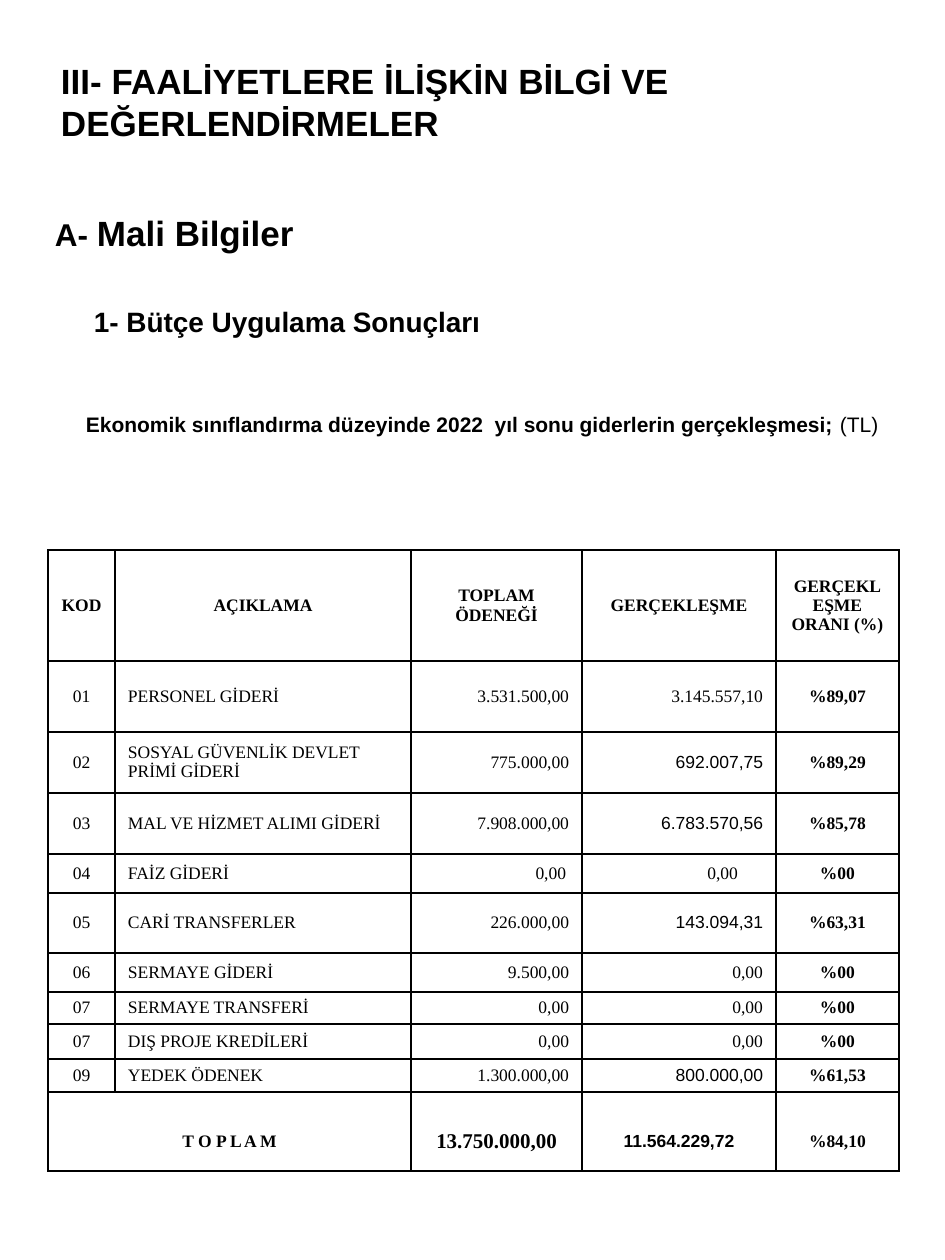
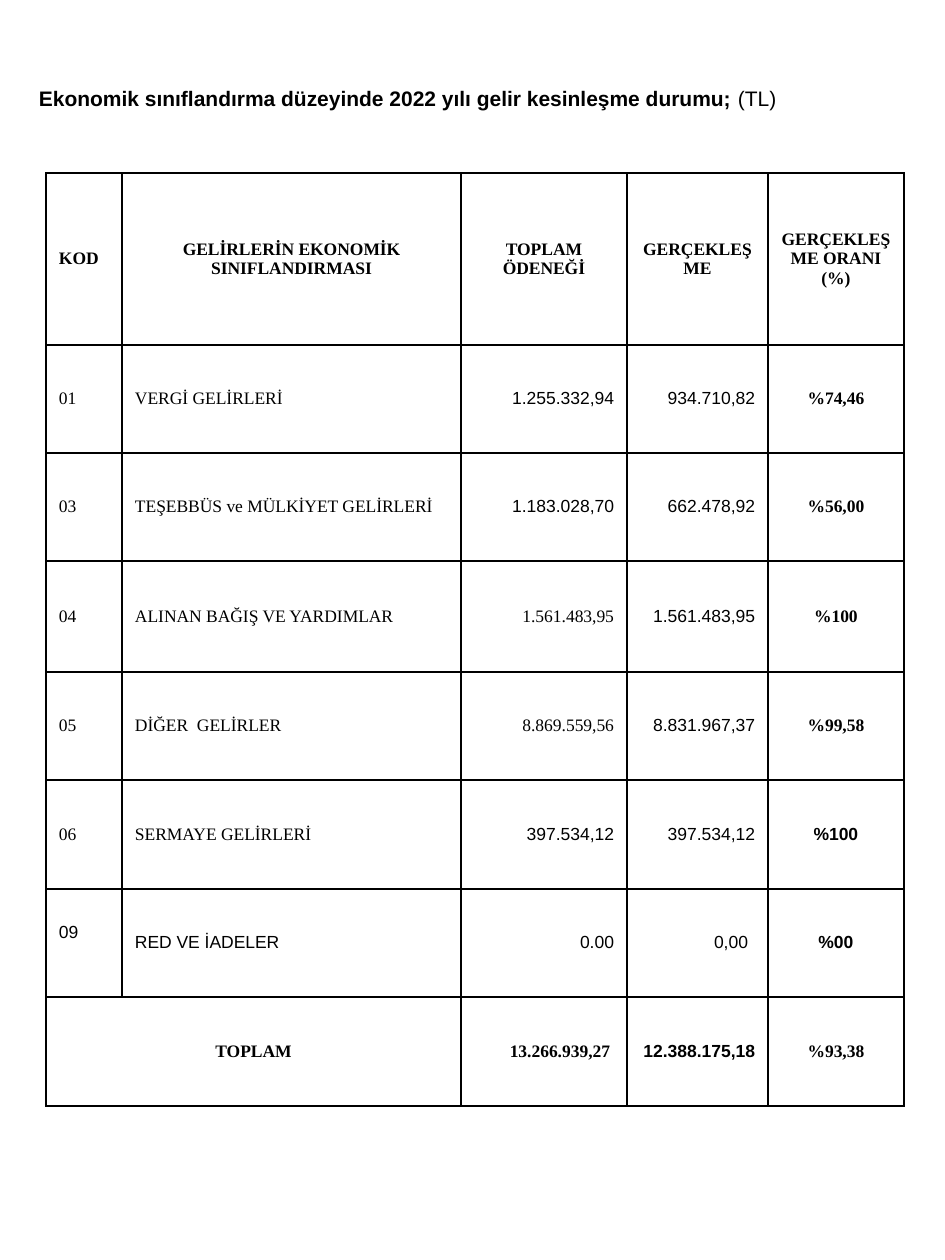
from dataclasses import dataclass
from pptx import Presentation
from pptx import util as u
from pptx.dml import color
from pptx.enum import text
from pptx.oxml import parse_xml
from pptx.oxml import ns

LEFT, MID, RIGHT = text.PP_ALIGN.LEFT, text.PP_ALIGN.CENTER, text.PP_ALIGN.RIGHT
CENTER = text.MSO_ANCHOR.MIDDLE


@dataclass(frozen=True)
class Theme:
    ink: str = "000000"
    sans: str = "Arial"
    serif: str = "Times New Roman"
    title: int = 20
    mark: int = 18
    head: int = 16
    lead: int = 12
    cell: int = 10
    rule: int = 12700
    side: int = 13
    edge: int = 5


T = Theme()


def px(n):
    return u.Emu(round(n * 914400 / 126))


def apply(item, **values):
    for name, value in values.items():
        setattr(item, name, value)


def write(para, words, size, bold=False, face=T.sans):
    run = para.add_run()
    run.text = words
    apply(run.font, size=u.Pt(size), bold=bold, name=face)
    run.font.color.rgb = color.RGBColor.from_string(T.ink)


def frame(slide, box, lines, top=6, anchor=text.MSO_ANCHOR.TOP):
    area = slide.shapes.add_textbox(*map(px, box)).text_frame
    apply(area, word_wrap=True, vertical_anchor=anchor, margin_top=px(top),
          margin_left=px(T.side), margin_right=px(T.side), margin_bottom=px(6))
    for i, (dent, gap, runs) in enumerate(lines):
        para = area.add_paragraph() if i else area.paragraphs[0]
        para.space_before = px(gap)
        para._p.get_or_add_pPr().set("marL", str(px(dent)))
        for run in runs:
            write(para, *run)


def border(cell):
    props = cell._tc.get_or_add_tcPr()
    for i, side in enumerate("LRTB"):
        props.insert(i, parse_xml(
            f'<a:ln{side} {ns.nsdecls("a")} w="{T.rule}"><a:solidFill>'
            f'<a:srgbClr val="{T.ink}"/></a:solidFill></a:ln{side}>'))


def grid(slide, spot, cols, rows, data, sides, sans, big=(), pads={}):
    box = (*spot, sum(cols), sum(rows))
    table = slide.shapes.add_table(len(rows), len(cols), *map(px, box)).table
    apply(table, first_row=False, horz_banding=False)
    for col, wide in zip(table.columns, cols):
        col.width = px(wide)
    for row, high in zip(table.rows, rows):
        row.height = px(high)
    last = len(rows) - 1
    table.cell(last, 0).merge(table.cell(last, 1))
    for r, line in enumerate(data):
        for c, words in enumerate(line):
            cell = table.cell(r, c)
            pad = dict(left=T.side, right=T.side, top=T.edge, bottom=T.edge)
            pad.update(pads.get((r, c), {}))
            apply(cell, vertical_anchor=CENTER,
                  **{f"margin_{k}": px(v) for k, v in pad.items()})
            cell.fill.background()
            border(cell)
            if not words:
                continue
            para = cell.text_frame.paragraphs[0]
            para.alignment = sides(r, c)
            write(para, words, T.lead if (r, c) in big else T.cell,
                  r in (0, last) or c == 4, T.sans if (r, c) in sans else T.serif)


COSTS = [
    ("KOD", "AÇIKLAMA", "TOPLAM ÖDENEĞİ", "GERÇEKLEŞME", "GERÇEKLEŞME ORANI (%)"),
    ("01", "PERSONEL GİDERİ", "3.531.500,00", "3.145.557,10", "%89,07"),
    ("02", "SOSYAL GÜVENLİK DEVLET PRİMİ GİDERİ", "775.000,00", "692.007,75", "%89,29"),
    ("03", "MAL VE HİZMET ALIMI GİDERİ", "7.908.000,00", "6.783.570,56", "%85,78"),
    ("04", "FAİZ GİDERİ", "0,00", "0,00", "%00"),
    ("05", "CARİ TRANSFERLER", "226.000,00", "143.094,31", "%63,31"),
    ("06", "SERMAYE GİDERİ", "9.500,00", "0,00", "%00"),
    ("07", "SERMAYE TRANSFERİ", "0,00", "0,00", "%00"),
    ("07", "DIŞ PROJE KREDİLERİ", "0,00", "0,00", "%00"),
    ("09", "YEDEK ÖDENEK", "1.300.000,00", "800.000,00", "%61,53"),
    ("T O P L A M", "", "13.750.000,00", "11.564.229,72", "%84,10"),
]
GAINS = [
    ("KOD", "GELİRLERİN EKONOMİK SINIFLANDIRMASI", "TOPLAM ÖDENEĞİ", "GERÇEKLEŞME",
     "GERÇEKLEŞME ORANI (%)"),
    ("01", "VERGİ GELİRLERİ", "1.255.332,94", "934.710,82", "%74,46"),
    ("03", "TEŞEBBÜS ve MÜLKİYET GELİRLERİ", "1.183.028,70", "662.478,92", "%56,00"),
    ("04", "ALINAN BAĞIŞ VE YARDIMLAR", "1.561.483,95", "1.561.483,95", "%100"),
    ("05", "DİĞER  GELİRLER", "8.869.559,56", "8.831.967,37", "%99,58"),
    ("06", "SERMAYE GELİRLERİ", "397.534,12", "397.534,12", "%100"),
    ("09", "RED VE İADELER", "0.00", "0,00", "%00"),
    ("TOPLAM", "", "13.266.939,27", "12.388.175,18", "%93,38"),
]


def costside(r, c):
    if r == 0 or (r, c) == (10, 3):
        return MID
    return MID if r == 10 and c == 0 else (MID, LEFT, RIGHT, RIGHT, MID)[c]


def gainside(r, c):
    if r == 0:
        return MID if c else LEFT
    return MID if r == 7 and c == 0 else (LEFT, LEFT, RIGHT, RIGHT, MID)[c]


def costs(slide):
    frame(slide, (48, 50, 897, 103), [
        (0, 0, [("III- FAALİYETLERE İLİŞKİN BİLGİ VE DEĞERLENDİRMELER", T.title, True)]),
    ], anchor=CENTER)
    frame(slide, (26, 203, 918, 1022), [
        (16, 0, [("A- ", T.mark, True), ("Mali Bilgiler", T.title, True)]),
        (55, 51, [("1- Bütçe Uygulama Sonuçları", T.head, True)]),
        (47, 73, [("Ekonomik sınıflandırma düzeyinde 2022  yıl sonu giderlerin gerçekleşmesi;",
                   T.lead, True), (" (TL)", T.lead)]),
    ], top=9)
    drop = {(10, c): dict(top=25) for c in (0, 3, 4)}
    grid(slide, (48, 550), (67, 296, 171, 194, 123),
         (111, 71, 61, 61, 39, 60, 39, 32, 35, 33, 79), COSTS, costside,
         sans={(r, 3) for r in (2, 3, 5, 9, 10)}, big={(10, 2)},
         pads={(4, 2): dict(right=16), (4, 3): dict(right=38),
               (10, 2): dict(top=25, right=25), **drop})


def gains(slide):
    frame(slide, (26, 54, 918, 1101), [
        (0, 0, [("Ekonomik sınıflandırma düzeyinde 2022 yılı gelir kesinleşme durumu;",
                 T.lead, True), (" (TL)", T.lead)]),
    ], top=43)
    grid(slide, (46, 173), (76, 339, 166, 141, 136),
         (172, 108, 108, 111, 108, 109, 108, 109), GAINS, gainside,
         sans={(1, 2), (2, 2), (5, 2), (5, 4)} | {(6, c) for c in range(5)}
         | {(r, 3) for r in range(1, 8)},
         pads={(6, 0): dict(bottom=25), (6, 3): dict(right=20), (7, 2): dict(right=17)})


def main():
    deck = Presentation()
    apply(deck, slide_width=px(945), slide_height=px(1260))
    for build in (costs, gains):
        build(deck.slides.add_slide(deck.slide_layouts[6]))
    deck.save("out.pptx")


if __name__ == "__main__":
    main()
